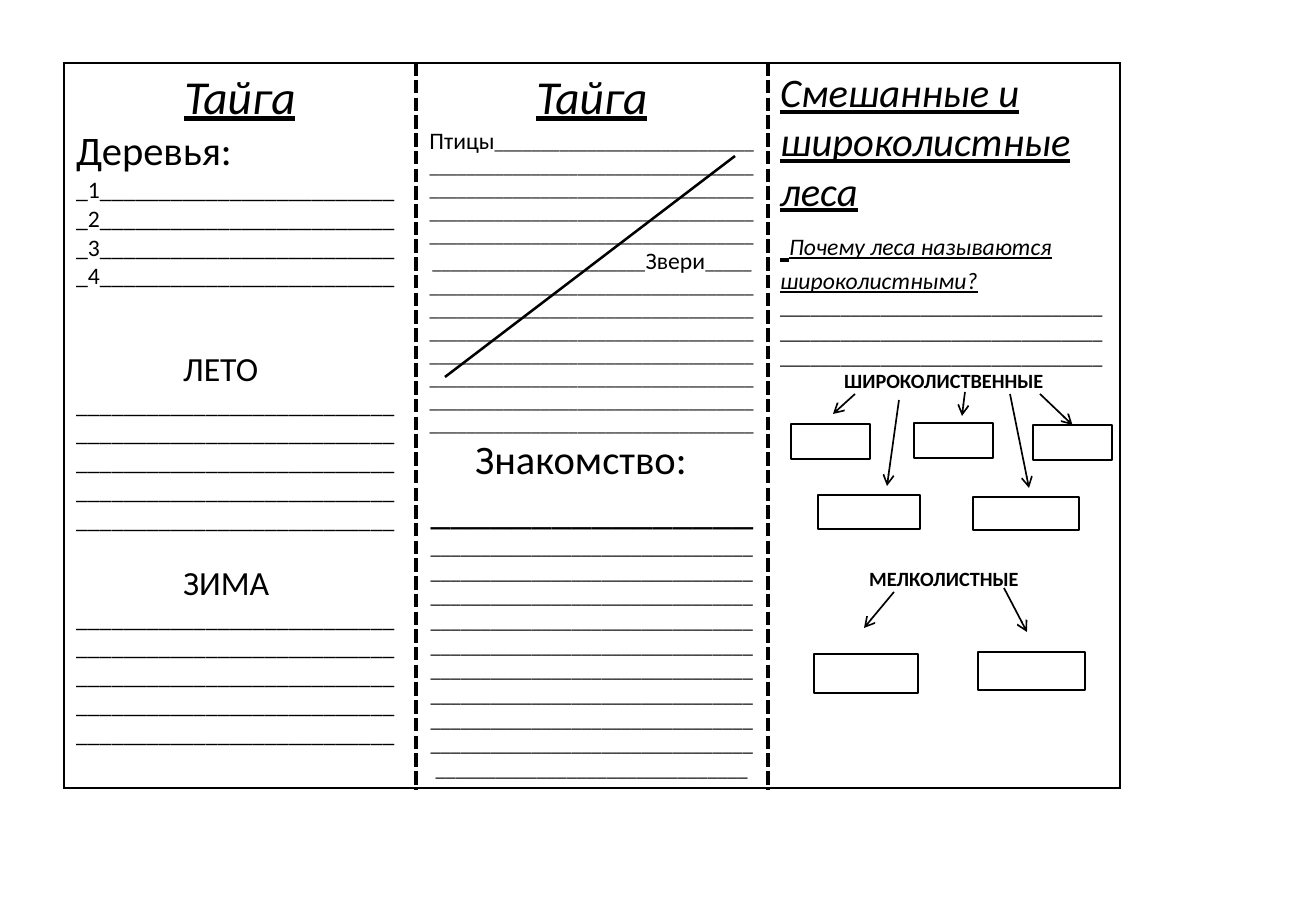
from lxml.etree import SubElement
from pptx import Presentation
from pptx.dml.color import RGBColor
from pptx.enum.shapes import MSO_CONNECTOR as Connector, MSO_SHAPE as Shape
from pptx.enum.text import PP_ALIGN as Align
from pptx.oxml import parse_xml
from pptx.oxml.ns import nsdecls, qn
from pptx.util import Emu, Pt

PX = 914400 / 121.5
COLORS = {"ink": "000000", "paper": "FFFFFF"}
FONT = "Calibri"


def blanks(per_line, lines=1, rest=0):
    return "_" * (per_line * lines + rest)


LEFT, CENTER = Align.LEFT, Align.CENTER
SEASON_LINES = ([(blanks(27, 5), 14)], LEFT, "", 0, 0)
TITLE = ([("Тайга", 28)], CENTER, "iu", 0, 0)
TREES = "".join(f"_{number}{blanks(25)}" for number in range(1, 5))

# Each paragraph: runs (text, size), alignment, style, space before, indent
COLUMNS = [
    [
        TITLE,
        ([("Деревья:", 24)], LEFT, "", 0, 0),
        ([(TREES, 14)], LEFT, "", 0, 0),
        ([("ЛЕТО", 20)], LEFT, "", 58, 107),
        SEASON_LINES,
        ([("ЗИМА", 20)], LEFT, "", 29, 107),
        SEASON_LINES,
    ],
    [
        TITLE,
        ([("Птицы", 14), (blanks(35, 4, 28 + 23), 11),
          ("Звери", 14), (blanks(35, 7, 5), 11)], CENTER, "", 0, 0),
        ([("Знакомство:", 24)], LEFT, "", 0, 47),
        ([(blanks(16), 24)], CENTER, "", 0, 0),
        ([(blanks(32, 9, 31), 12)], CENTER, "", 0, 0),
    ],
    [
        ([("Смешанные и широколистные леса", 24)], LEFT, "iu", 0, 0),
        ([(" ", 24), ("Почему леса называются широколистными?", 14)],
         LEFT, "iu", 0, 0),
        ([(blanks(32, 3), 12)], LEFT, "", 0, 0),
        ([("ШИРОКОЛИСТВЕННЫЕ", 12)], CENTER, "b", 0, 0),
        ([("МЕЛКОЛИСТНЫЕ", 12)], CENTER, "b", 173, 0),
    ],
]
TABLE = (64, 63, 1056, 719)
STRIKE = (735, 156, 445, 377)
BOXES = [
    (791, 424, 79, 35), (914, 423, 79, 35), (1033, 425, 79, 35),
    (818, 495, 102, 34), (973, 497, 106, 33),
    (814, 654, 104, 39), (978, 652, 107, 38),
]
ARROWS = [
    (855, 394, 833, 414, None), (965, 392, 962, 416, None),
    (1040, 394, 1073, 425, 2), (899, 400, 887, 486, None),
    (1010, 394, 1029, 488, None), (894, 592, 864, 628, None),
    (1004, 588, 1027, 632, None),
]


def px(*values):
    return [Emu(round(value * PX)) for value in values]


def color(name):
    return RGBColor.from_string(COLORS[name])


def write_cell(cell, paragraphs):
    frame = cell.text_frame
    for index, (runs, align, style, before, indent) in enumerate(paragraphs):
        paragraph = frame.add_paragraph() if index else frame.paragraphs[0]
        paragraph.alignment = align
        paragraph.space_before = Pt(round(before * PX / 12700, 1))
        if indent:
            paragraph._p.get_or_add_pPr().set("marL", str(px(indent)[0]))
        font = paragraph.font
        font.name = FONT
        font.size = Pt(runs[0][1])
        font.bold, font.italic, font.underline = (key in style for key in "biu")
        font.color.rgb = color("ink")
        for text, size in runs:
            run = paragraph.add_run()
            run.text = text
            if len(runs) > 1:
                run.font.size = Pt(size)


def set_borders(cell, dashed_sides):
    properties = cell._tc.get_or_add_tcPr()
    for side in "LRTB":
        dashed = side in dashed_sides
        properties.append(parse_xml(
            f'<a:ln{side} {nsdecls("a")} w="{Pt(2.25 if dashed else 1)}">'
            f'<a:solidFill><a:srgbClr val="{COLORS["ink"]}"/></a:solidFill>'
            f'<a:prstDash val="{"dash" if dashed else "solid"}"/></a:ln{side}>'))
    cell.fill.background()


def add_line(slide, ends, width, arrow=False):
    line = slide.shapes.add_connector(Connector.STRAIGHT, *px(*ends))
    line.line.color.rgb = color("ink")
    line.line.width = Pt(width)
    if arrow:
        SubElement(line.line._get_or_add_ln(), qn("a:tailEnd"), type="arrow")
    SubElement(line._element.spPr, qn("a:effectLst"))
    return line


def add_box(slide, place):
    box = slide.shapes.add_shape(Shape.RECTANGLE, *px(*place))
    box.shadow.inherit = False
    box.fill.solid()
    box.fill.fore_color.rgb = color("paper")
    box.line.color.rgb = color("ink")
    box.line.width = Pt(1)
    return box


def main():
    presentation = Presentation()
    presentation.slide_width, presentation.slide_height = px(1316, 911)
    slide = presentation.slides.add_slide(presentation.slide_layouts[6])

    table = slide.shapes.add_table(1, len(COLUMNS), *px(*TABLE)).table
    table.first_row = table.horz_banding = False
    for index, paragraphs in enumerate(COLUMNS):
        cell = table.cell(0, index)
        write_cell(cell, paragraphs)
        set_borders(cell, ("R", "LR", "L")[index])

    add_line(slide, STRIKE, 1.5)
    boxes = [add_box(slide, place) for place in BOXES]
    for *ends, target in ARROWS:
        arrow = add_line(slide, ends, 1, arrow=True)
        if target is not None:
            arrow.end_connect(boxes[target], 0)

    presentation.save("out.pptx")


if __name__ == "__main__":
    main()
